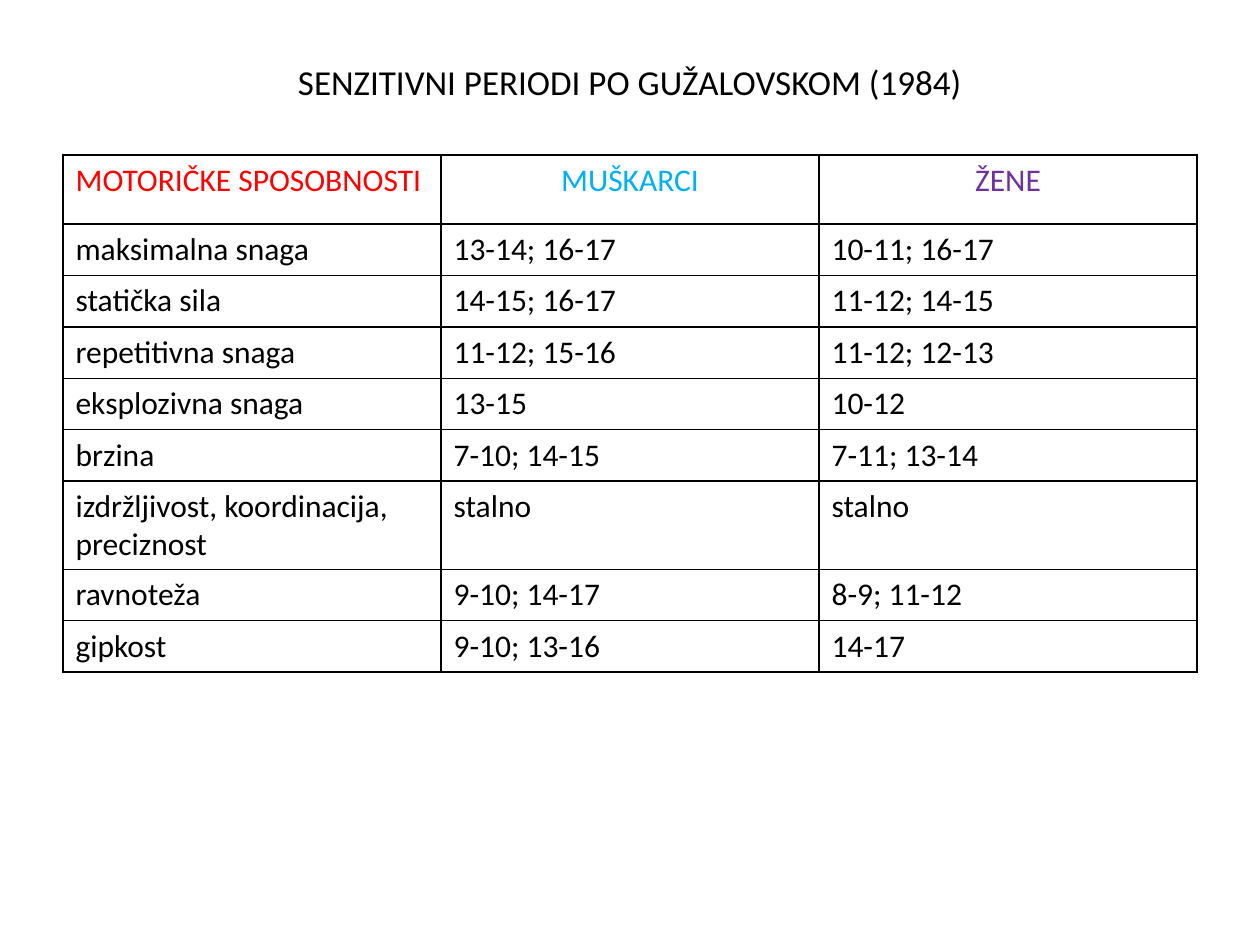
from lxml.etree import SubElement
from pptx import Presentation
from pptx.dml.color import RGBColor
from pptx.enum.text import MSO_ANCHOR, PP_ALIGN
from pptx.oxml.ns import qn
from pptx.util import Inches, Pt

COLORS = {
    "text": "000000",
    "line": "000000",
    "abilities": "FF0000",
    "men": "00B0F0",
    "women": "7030A0",
}
HEADER = [
    ("MOTORIČKE SPOSOBNOSTI", "abilities", PP_ALIGN.LEFT),
    ("MUŠKARCI", "men", PP_ALIGN.CENTER),
    ("ŽENE", "women", PP_ALIGN.CENTER),
]
PERIODS = [
    ("maksimalna snaga", "13-14; 16-17", "10-11; 16-17"),
    ("statička sila", "14-15; 16-17", "11-12; 14-15"),
    ("repetitivna snaga", "11-12; 15-16", "11-12; 12-13"),
    ("eksplozivna snaga", "13-15", "10-12"),
    ("brzina", "7-10; 14-15", "7-11; 13-14"),
    ("izdržljivost, koordinacija, preciznost", "stalno", "stalno"),
    ("ravnoteža", "9-10; 14-17", "8-9; 11-12"),
    ("gipkost", "9-10; 13-16", "14-17"),
]


def write_text(tf, text, size=18, color="text", align=PP_ALIGN.LEFT, font="Calibri"):
    p = tf.paragraphs[0]
    p.alignment = align
    r = p.add_run()
    r.text = text
    r.font.name = font
    r.font.size = Pt(size)
    r.font.color.rgb = RGBColor.from_string(COLORS[color])


class Deck:
    columns, rows = 20, 25

    def __init__(self, width=10, height=7.5):
        self.prs = Presentation()
        self.prs.slide_width = Inches(width)
        self.prs.slide_height = Inches(height)
        self.s = self.prs.slides.add_slide(self.prs.slide_layouts[6])

    def x(self, columns):
        return round(self.prs.slide_width * columns / self.columns)

    def y(self, rows):
        return round(self.prs.slide_height * rows / self.rows)

    def title(self, text, col, row, cols, rows):
        sp = self.s.shapes.add_textbox(self.x(col), self.y(row), self.x(cols), self.y(rows))
        tf = sp.text_frame
        tf.word_wrap = True
        tf.vertical_anchor = MSO_ANCHOR.MIDDLE
        write_text(tf, text, size=20, align=PP_ALIGN.CENTER)

    def borders(self, cell, width=1):
        tc_pr = cell._tc.get_or_add_tcPr()
        for index, side in enumerate(("lnL", "lnR", "lnT", "lnB")):
            ln = tc_pr.makeelement(qn(f"a:{side}"), {"w": str(Pt(width))})
            fill = SubElement(ln, qn("a:solidFill"))
            SubElement(fill, qn("a:srgbClr"), val=COLORS["line"])
            tc_pr.insert(index, ln)

    def table(self, header, body, col, row, cols, header_rows, body_rows):
        heights = [header_rows] + [body_rows] * len(body)
        frame = self.s.shapes.add_table(
            len(heights), len(header), self.x(col), self.y(row), self.x(cols), self.y(sum(heights))
        )
        table = frame.table
        table.first_row = table.horz_banding = False
        for line, height in zip(table.rows, heights):
            line.height = self.y(height)
        lines = [header] + [[(text, "text", PP_ALIGN.LEFT) for text in line] for line in body]
        for i, line in enumerate(lines):
            for j, (text, color, align) in enumerate(line):
                cell = table.cell(i, j)
                cell.fill.background()
                self.borders(cell)
                write_text(cell.text_frame, text, color=color, align=align)


def main():
    deck = Deck()
    deck.title("SENZITIVNI PERIODI PO GUŽALOVSKOM (1984)", col=1, row=1, cols=18, rows=2.3)
    deck.table(HEADER, PERIODS, col=1, row=4.1, cols=18, header_rows=1.83, body_rows=1.36)
    deck.prs.save("out.pptx")


if __name__ == "__main__":
    main()
